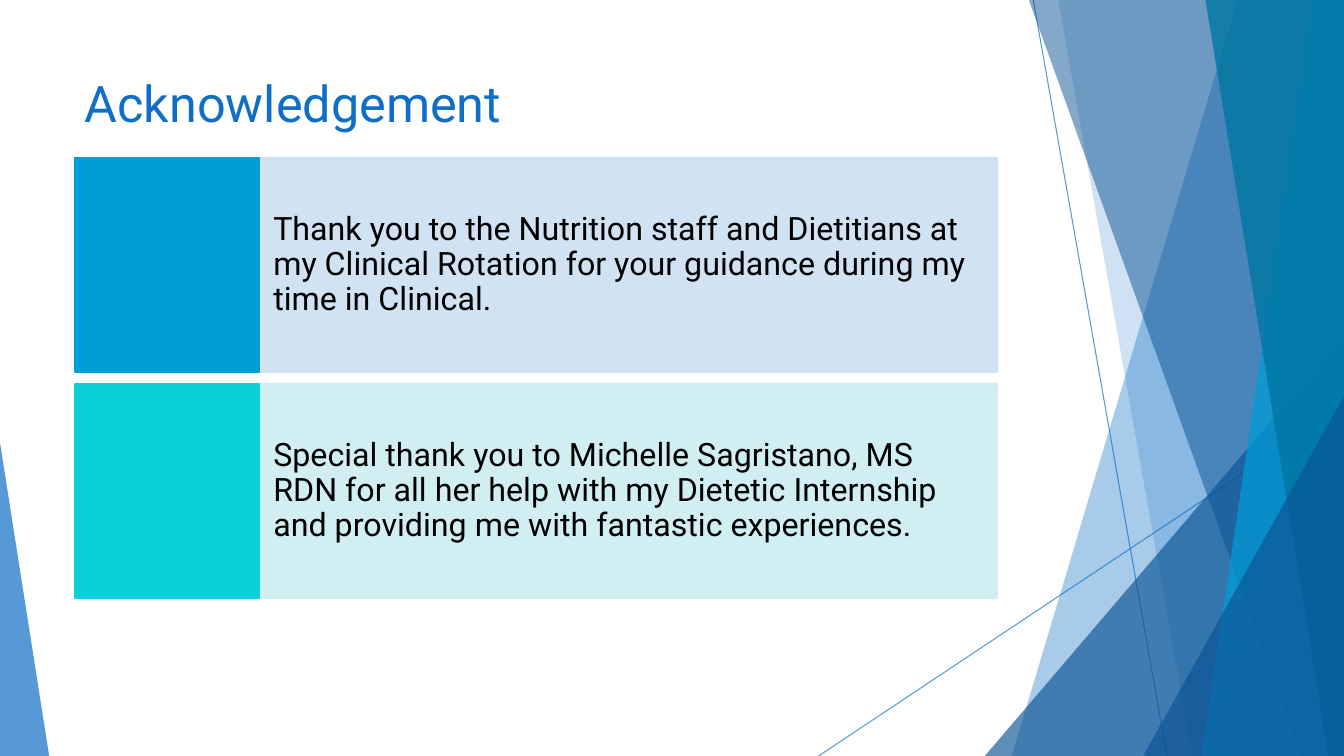
from lxml.etree import SubElement
from pptx import Presentation
from pptx.dml.color import RGBColor
from pptx.enum.shapes import MSO_CONNECTOR, MSO_SHAPE
from pptx.enum.text import MSO_ANCHOR, PP_ALIGN
from pptx.oxml.ns import qn
from pptx.util import Cm, Pt

FONT = "Roboto"
COLORS = {
    "blue": "0F6FC6",
    "navy": "0B5394",
    "sky": "009DD9",
    "teal": "0076A3",
    "turquoise": "0BD0D9",
    "pale blue": "CCDFF1",
    "pale turquoise": "CCEEF1",
    "black": "000000",
}
WIDTH, HEIGHT = 33.87, 19.05
ACKNOWLEDGEMENTS = [
    ("sky", "pale blue",
     "Thank you to the Nutrition staff and Dietitians at my Clinical Rotation "
     "for your guidance during my time in Clinical."),
    ("turquoise", "pale turquoise",
     "Special thank you to Michelle Sagristano, MS RDN for all her help with my "
     "Dietetic Internship and providing me with fantastic experiences."),
]


def rgb(name):
    return RGBColor.from_string(COLORS[name])


def set_opacity(properties, percent):
    for color in properties.iter(qn("a:srgbClr")):
        SubElement(color, qn("a:alpha"), val=str(percent * 1000))


def paint(shape, color, opacity=100, outline=None):
    shape.shadow.inherit = False
    shape.fill.solid()
    shape.fill.fore_color.rgb = rgb(color)
    if outline:
        shape.line.color.rgb = rgb(color)
        shape.line.width = Pt(outline)
    else:
        shape.line.fill.background()
    if opacity < 100:
        set_opacity(shape.element.spPr, opacity)


def add_ray(slide, start, end):
    ray = slide.shapes.add_connector(
        MSO_CONNECTOR.STRAIGHT, *(Cm(value) for value in start + end))
    ray.line.color.rgb = rgb("blue")
    ray.line.width = Pt(0.75)
    set_opacity(ray.element.spPr, 70)
    SubElement(ray.element.spPr, qn("a:effectLst"))


def add_band(slide, right, bottom, top_left, bottom_left, color, opacity):
    builder = slide.shapes.build_freeform(Cm(top_left), Cm(0))
    corners = [(right, 0), (right, bottom), (bottom_left, bottom)]
    builder.add_line_segments([(Cm(x), Cm(y)) for x, y in corners])
    paint(builder.convert_to_shape(), color, opacity)


def add_wedge(slide, left, bottom, width, height, apex, color, opacity):
    wedge = slide.shapes.add_shape(
        MSO_SHAPE.ISOSCELES_TRIANGLE,
        Cm(left), Cm(bottom - height), Cm(width), Cm(height))
    wedge.adjustments[0] = apex
    paint(wedge, color, opacity)


def add_facets(slide, left, right, bottom):
    add_ray(slide, (right - 7.83, 0), (right - 4.46, bottom))
    add_ray(slide, (right, 10.24), (right - 13.24, bottom))
    add_band(slide, right, bottom, right - 2.68, right - 8.37, "blue", 36)
    add_band(slide, right, bottom, right - 7.2, right - 3.82, "blue", 20)
    add_wedge(slide, right - 9.05, bottom, 9.05, 10.59, 1, "navy", 66)
    add_band(slide, right, bottom, right - 7.94, right - 1.08, "navy", 50)
    add_band(slide, right, bottom, right - 0.77, right - 3.59, "sky", 70)
    add_band(slide, right, bottom, right - 3.49, right - 0.39, "teal", 80)
    add_wedge(slide, right - 5.06, bottom, 5.06, 9.07, 1, "navy", 66)
    add_wedge(slide, left, bottom, 1.24, 7.9, 0, "blue", 70)


def add_title(slide, text, left, top, width, height):
    title = slide.shapes.title
    title.left, title.top = Cm(left), Cm(top)
    title.width, title.height = Cm(width), Cm(height)
    frame = title.text_frame
    frame.text = text
    frame.vertical_anchor = MSO_ANCHOR.TOP
    paragraph = frame.paragraphs[0]
    paragraph.alignment = PP_ALIGN.LEFT
    paragraph.font.name = FONT
    paragraph.font.size = Pt(36)
    paragraph.font.color.rgb = rgb("blue")


def add_acknowledgement(slide, left, top, width, height, accent, tint, text):
    tile_width = width / 5
    panel = slide.shapes.add_shape(
        MSO_SHAPE.RECTANGLE,
        Cm(left + tile_width), Cm(top), Cm(width - tile_width), Cm(height))
    paint(panel, tint, 90, outline=1.5)
    frame = panel.text_frame
    frame.word_wrap = True
    frame.vertical_anchor = MSO_ANCHOR.MIDDLE
    frame.margin_left = frame.margin_right = Cm(0.36)
    frame.margin_top = frame.margin_bottom = Cm(1.37)
    frame.text = text
    paragraph = frame.paragraphs[0]
    paragraph.alignment = PP_ALIGN.LEFT
    paragraph.line_spacing = 0.9
    paragraph.font.name = FONT
    paragraph.font.size = Pt(23)
    paragraph.font.color.rgb = rgb("black")
    tile = slide.shapes.add_shape(
        MSO_SHAPE.RECTANGLE, Cm(left), Cm(top), Cm(tile_width), Cm(height))
    paint(tile, accent, outline=1.5)


def add_acknowledgements(slide, left, top, width, row_height, gap):
    for index, (accent, tint, text) in enumerate(ACKNOWLEDGEMENTS):
        row_top = top + index * (row_height + gap)
        add_acknowledgement(
            slide, left, row_top, width, row_height, accent, tint, text)


def main():
    presentation = Presentation()
    presentation.slide_width = Cm(WIDTH)
    presentation.slide_height = Cm(HEIGHT)
    slide = presentation.slides.add_slide(presentation.slide_layouts[5])
    add_facets(slide, 0, WIDTH, HEIGHT)
    add_title(slide, "Acknowledgement", 1.88, 1.7, 23.88, 3.66)
    add_acknowledgements(slide, 1.88, 3.98, 23.24, 5.4, 0.29)
    presentation.save("out.pptx")


if __name__ == "__main__":
    main()
